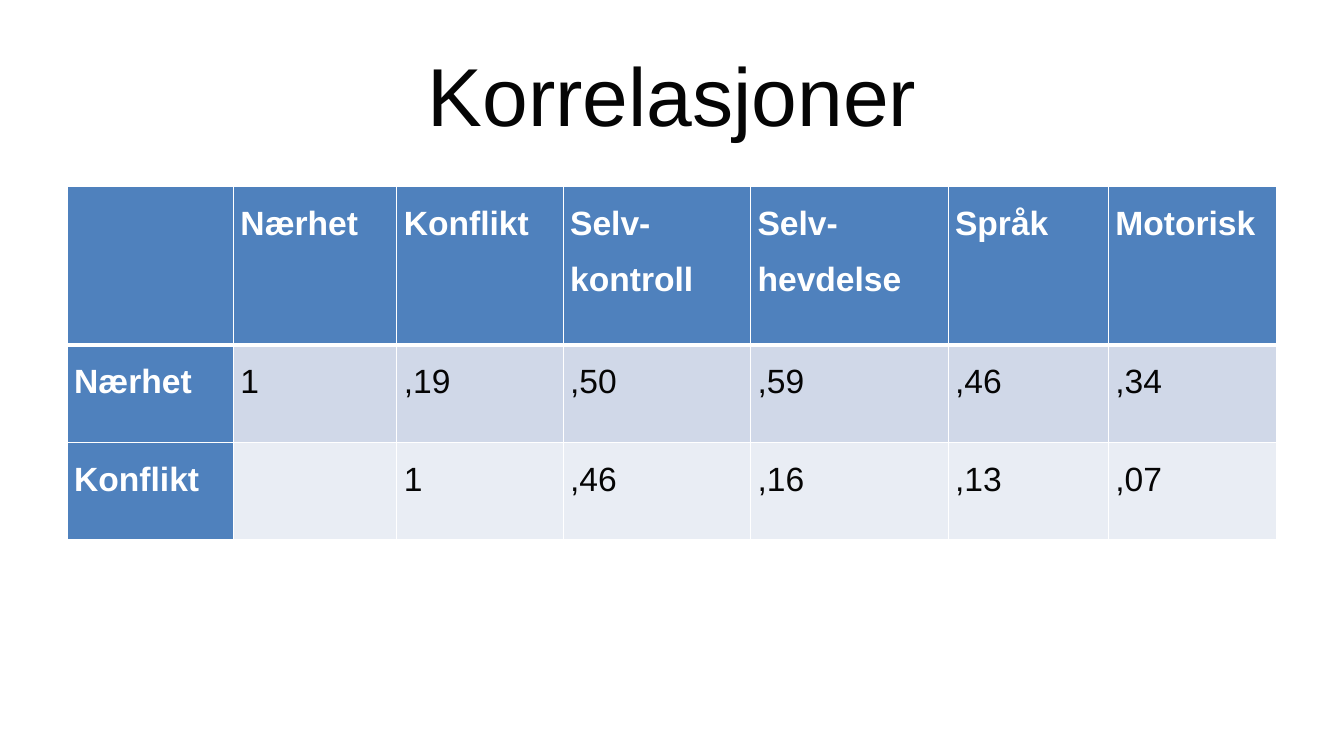
from lxml.etree import SubElement
from pptx import Presentation
from pptx.dml.color import RGBColor
from pptx.enum.text import MSO_ANCHOR, PP_ALIGN
from pptx.oxml.ns import qn
from pptx.util import Pt

TITLE = "Korrelasjoner"
ROWS = [
    ["", "Nærhet", "Konflikt", "Selv-kontroll", "Selv-hevdelse", "Språk", "Motorisk"],
    ["Nærhet", "1", ",19", ",50", ",59", ",46", ",34"],
    ["Konflikt", "", "1", ",46", ",16", ",13", ",07"],
]
COLUMN_WIDTHS = [118.8, 116.7, 118.8, 133.9, 141.1, 114.5, 120.2]
ROW_HEIGHTS = [113, 69.8, 69.8]
LEFT, TABLE_TOP, WIDTH = 48, 133.2, 864

FONT = "Arial"
BLACK = RGBColor(0x05, 0x05, 0x05)
WHITE = RGBColor(0xFF, 0xFF, 0xFF)
BLUE = RGBColor(0x4F, 0x81, 0xBD)
BANDS = [RGBColor(0xD0, 0xD8, 0xE8), RGBColor(0xE9, 0xED, 0xF4)]


def write(frame, text, size, color, bold=False, align=PP_ALIGN.CENTER, spacing=1.0):
    frame.word_wrap = True
    para = frame.paragraphs[0]
    para.alignment = align
    para.line_spacing = spacing
    para.font.size = Pt(size)
    if text:
        span = para.add_run()
        span.text = text
        span.font.name = FONT
        span.font.size = Pt(size)
        span.font.bold = bold
        span.font.color.rgb = color


def set_borders(cell, **widths):
    """Draw white borders; widths are points keyed by side L, R, T and B."""
    properties = cell._tc.get_or_add_tcPr()
    for side, width in widths.items():
        line = SubElement(properties, qn(f"a:ln{side}"), w=str(int(Pt(width))))
        fill = SubElement(line, qn("a:solidFill"))
        SubElement(fill, qn("a:srgbClr"), val=str(WHITE))


def add_title(page):
    box = page.shapes.add_textbox(Pt(LEFT), Pt(21.6), Pt(WIDTH), Pt(90))
    box.text_frame.vertical_anchor = MSO_ANCHOR.MIDDLE
    write(box.text_frame, TITLE, 58.7, BLACK)


def add_correlations(page):
    table = page.shapes.add_table(
        len(ROWS), len(COLUMN_WIDTHS), Pt(LEFT), Pt(TABLE_TOP),
        Pt(WIDTH), Pt(sum(ROW_HEIGHTS))).table
    for column, width in zip(table.columns, COLUMN_WIDTHS):
        column.width = Pt(width)
    for row, height in zip(table.rows, ROW_HEIGHTS):
        row.height = Pt(height)

    for r, values in enumerate(ROWS):
        for c, text in enumerate(values):
            cell = table.cell(r, c)
            heading = r == 0 or c == 0
            cell.margin_left = cell.margin_right = Pt(5)
            cell.margin_top = cell.margin_bottom = Pt(0)
            set_borders(cell, L=1, R=1, T=3 if r == 1 else 1, B=3 if r == 0 else 1)
            cell.fill.solid()
            cell.fill.fore_color.rgb = BLUE if heading else BANDS[(r - 1) % 2]
            write(cell.text_frame, text, 24, WHITE if heading else BLACK,
                  bold=heading, align=PP_ALIGN.JUSTIFY, spacing=1.5)


def main():
    deck = Presentation()
    deck.slide_width, deck.slide_height = Pt(960), Pt(540)
    page = deck.slides.add_slide(deck.slide_layouts[6])
    add_title(page)
    add_correlations(page)
    deck.save("out.pptx")


if __name__ == "__main__":
    main()
